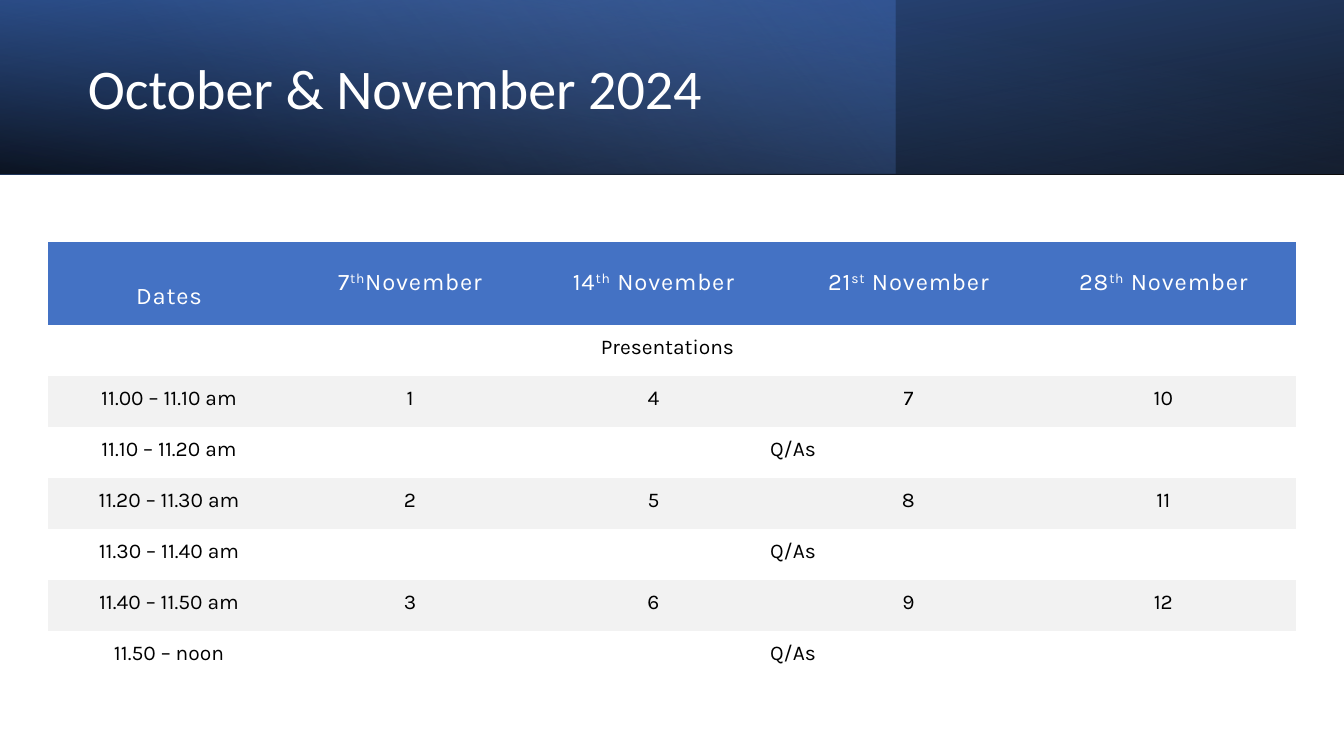
from lxml import etree
from pptx import Presentation
from pptx.dml.color import RGBColor
from pptx.enum.shapes import MSO_SHAPE
from pptx.enum.text import MSO_ANCHOR, PP_ALIGN
from pptx.oxml.ns import qn
from pptx.util import Emu, Pt

RECTANGLE = MSO_SHAPE.RECTANGLE
MIDDLE, TOP = MSO_ANCHOR.MIDDLE, MSO_ANCHOR.TOP
CENTER = PP_ALIGN.CENTER

PX = 914400 / 100.8
SLIDE_WIDTH, SLIDE_HEIGHT = 1344, 756
COLORS = {
    "white": "FFFFFF", "black": "000000", "navy": "2F5597",
    "blue": "4472C4", "light_blue": "8FAADC", "band": "F2F2F2",
}
NO_GRID_STYLE = "{2D5ABB26-0587-4C30-8999-92F81FD0307C}"

# Banner layers: width, rotation, flipped, angle, stops (position %, color, opacity %)
BANNER_LAYERS = [
    (1344, 180, True, 100, [(0, "black", 96), (100, "navy", 100)]),
    (896, 0, False, 140, [(0, "blue", 41), (74, "light_blue", 0)]),
    (1344, 0, True, 260, [(0, "black", 63), (78, "blue", 15)]),
]

COLUMN_WIDTHS = [251, 231, 256, 254, 256]
HEADER_HEIGHT, ROW_HEIGHT = 83, 51
HEADER_LINE = 28
DATES = [("7", "th", "November"), ("14", "th", " November"),
         ("21", "st", " November"), ("28", "th", " November")]
# Each row lists its texts; the last one spans the columns that remain
ROWS = [
    ["Presentations"],
    ["11.00 – 11.10 am", "1", "4", "7", "10"],
    ["11.10 – 11.20 am", "Q/As"],
    ["11.20 – 11.30 am", "2", "5", "8", "11"],
    ["11.30 – 11.40 am", "Q/As"],
    ["11.40 – 11.50 am", "3", "6", "9", "12"],
    ["11.50 – noon", "Q/As"],
]


def px(length):
    return Emu(round(length * PX))


def rgb(name):
    return RGBColor.from_string(COLORS[name])


def set_font(paragraph, name, size, color):
    paragraph.font.name = name
    paragraph.font.size = Pt(size)
    paragraph.font.color.rgb = rgb(color)


def set_gradient(shape, angle, stops):
    shape.fill.background()
    properties = shape._element.spPr
    gradient = etree.Element(qn("a:gradFill"), rotWithShape="1")
    stop_list = etree.SubElement(gradient, qn("a:gsLst"))
    for position, color, opacity in stops:
        stop = etree.SubElement(stop_list, qn("a:gs"), pos=str(position * 1000))
        value = etree.SubElement(stop, qn("a:srgbClr"), val=COLORS[color])
        etree.SubElement(value, qn("a:alpha"), val=str(opacity * 1000))
    etree.SubElement(gradient, qn("a:lin"), ang=str(angle * 60000), scaled="0")
    properties.replace(properties.find(qn("a:noFill")), gradient)


def add_banner(slide, left, top, height):
    # Layered gradients
    for width, rotation, flipped, angle, stops in BANNER_LAYERS:
        layer = slide.shapes.add_shape(RECTANGLE, px(left), px(top), px(width), px(height))
        layer.shadow.inherit = False
        layer.line.fill.background()
        layer.rotation = rotation
        if flipped:
            layer._element.spPr.find(qn("a:xfrm")).set("flipH", "1")
        set_gradient(layer, angle, stops)

    # Title
    title = slide.shapes.add_textbox(px(left + 78), px(top + 27), px(778), px(128))
    frame = title.text_frame
    frame.word_wrap = True
    frame.vertical_anchor = MIDDLE
    paragraph = frame.paragraphs[0]
    paragraph.text = "October & November 2024"
    paragraph.line_spacing = 0.9
    set_font(paragraph, "Calibri", 40, "white")


def fill_cell(cell, runs, size, color, fill=None, anchor=TOP, spacing=0, extra_top=0):
    cell.margin_left, cell.margin_right = 0, px(9)
    cell.margin_top, cell.margin_bottom = px(10 + extra_top), px(12)
    cell.vertical_anchor = anchor
    if fill:
        cell.fill.solid()
        cell.fill.fore_color.rgb = rgb(fill)
    else:
        cell.fill.background()
    paragraph = cell.text_frame.paragraphs[0]
    paragraph.alignment = CENTER
    set_font(paragraph, "Karla", size, color)
    for index, text in enumerate(runs):
        run = paragraph.add_run()
        run.text = text
        properties = run.font._element
        if spacing:
            properties.set("spc", str(spacing))
        if index == 1:  # ordinal suffix
            properties.set("baseline", "30000")


def add_schedule(slide, left, top):
    height = HEADER_HEIGHT + ROW_HEIGHT * len(ROWS)
    frame = slide.shapes.add_table(len(ROWS) + 1, len(COLUMN_WIDTHS), px(left), px(top),
                                   px(sum(COLUMN_WIDTHS)), px(height))
    table = frame.table
    table.first_row = table.horz_banding = False
    table._tbl.tblPr.find(qn("a:tableStyleId")).text = NO_GRID_STYLE
    for column, width in zip(table.columns, COLUMN_WIDTHS):
        column.width = px(width)
    for index, row in enumerate(table.rows):
        row.height = px(ROW_HEIGHT if index else HEADER_HEIGHT)

    # Header row, with its first label set lower
    for column, runs in enumerate([("Dates",)] + DATES):
        fill_cell(table.cell(0, column), runs, 17, "white", "blue", MIDDLE, 60,
                  0 if column else HEADER_LINE)

    # Time slots
    last_column = len(COLUMN_WIDTHS) - 1
    for row, texts in enumerate(ROWS, start=1):
        if len(texts) <= last_column:
            table.cell(row, len(texts) - 1).merge(table.cell(row, last_column))
        fill = "band" if row % 2 == 0 else None
        for column, text in enumerate(texts):
            fill_cell(table.cell(row, column), [text], 15, "black", fill)


def main():
    presentation = Presentation()
    presentation.slide_width, presentation.slide_height = px(SLIDE_WIDTH), px(SLIDE_HEIGHT)
    slide = presentation.slides.add_slide(presentation.slide_layouts[6])
    add_banner(slide, 0, 0, 174)
    add_schedule(slide, 48, 242)
    presentation.save("out.pptx")


if __name__ == "__main__":
    main()
